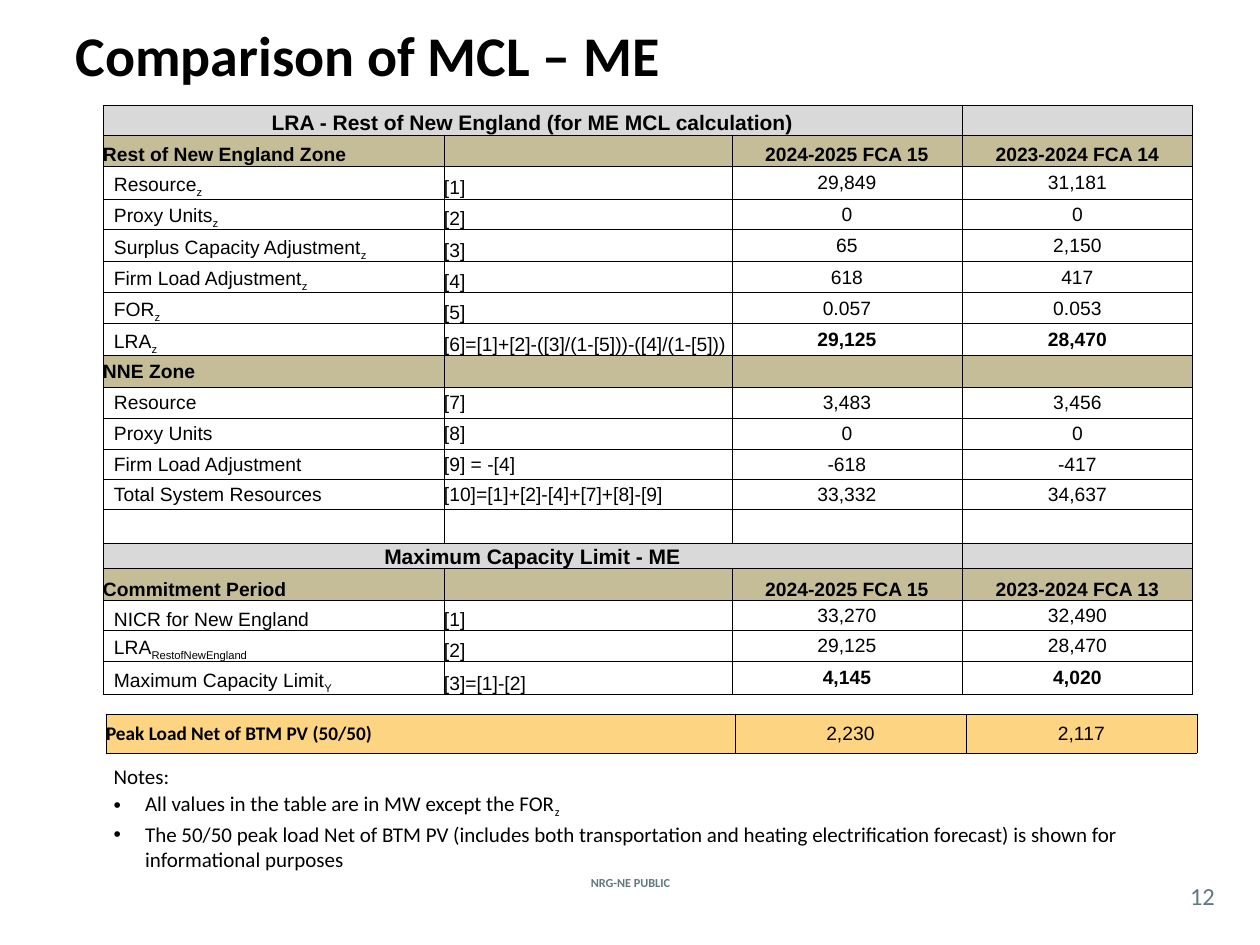
from dataclasses import dataclass

from lxml.etree import SubElement
from pptx import Presentation
from pptx.dml.color import RGBColor
from pptx.enum.text import MSO_ANCHOR, MSO_AUTO_SIZE, PP_ALIGN
from pptx.oxml.ns import qn
from pptx.util import Emu, Pt

PX_PER_INCH = 126
BLACK, SLATE = "000000", "62777F"
TOP, MIDDLE, BOTTOM = MSO_ANCHOR.TOP, MSO_ANCHOR.MIDDLE, MSO_ANCHOR.BOTTOM
LEFT, CENTER = PP_ALIGN.LEFT, PP_ALIGN.CENTER
VALUE_COLUMNS = 2


@dataclass(frozen=True)
class RowStyle:
    fill: str | None = None
    size: int = 11
    bold_label: bool = False
    bold_value: bool = False
    label_font: str = "Arial"
    label_indent: int = 0
    label_anchor: MSO_ANCHOR = BOTTOM
    value_anchor: MSO_ANCHOR = MIDDLE
    banner: bool = False


@dataclass(frozen=True)
class Row:
    height: int
    style: RowStyle
    cells: tuple[str, ...]


BANNER = RowStyle("D9D9D9", size=12, bold_label=True, banner=True)
HEADER = RowStyle("C4BD97", bold_label=True, bold_value=True, value_anchor=BOTTOM)
SECTION = RowStyle("C4BD97", bold_label=True, label_anchor=MIDDLE)
ZONE = RowStyle(label_indent=11)
RESULT = RowStyle(label_indent=11, bold_value=True)
NNE = RowStyle(label_indent=11, label_anchor=MIDDLE)
PEAK = RowStyle("FDD582", bold_label=True, label_font="Calibri", label_anchor=MIDDLE)

# An underscore starts a subscript.
CAPACITY_ROWS = [
    Row(30, BANNER, ("LRA - Rest of New England (for ME MCL calculation)", "", "", "")),
    Row(31, HEADER, ("Rest of New England Zone", "", "2024-2025 FCA 15", "2023-2024 FCA 14")),
    Row(33, ZONE, ("Resource_z", "[1]", "29,849", "31,181")),
    Row(31, ZONE, ("Proxy Units_z", "[2]", "0", "0")),
    Row(32, ZONE, ("Surplus Capacity Adjustment_z", "[3]", "65", "2,150")),
    Row(31, ZONE, ("Firm Load Adjustment_z", "[4]", "618", "417")),
    Row(31, ZONE, ("FOR_z", "[5]", "0.057", "0.053")),
    Row(32, RESULT, ("LRA_z", "[6]=[1]+[2]-([3]/(1-[5]))-([4]/(1-[5]))", "29,125", "28,470")),
    Row(32, SECTION, ("NNE Zone", "", "", "")),
    Row(31, NNE, ("Resource", "[7]", "3,483", "3,456")),
    Row(31, NNE, ("Proxy Units", "[8]", "0", "0")),
    Row(30, NNE, ("Firm Load Adjustment", "[9] = -[4]", "-618", "-417")),
    Row(30, NNE, ("Total System Resources", "[10]=[1]+[2]-[4]+[7]+[8]-[9]", "33,332", "34,637")),
    Row(34, NNE, ("", "", "", "")),
    Row(25, BANNER, ("Maximum Capacity Limit - ME", "", "", "")),
    Row(32, HEADER, ("Commitment Period", "", "2024-2025 FCA 15", "2023-2024 FCA 13")),
    Row(30, ZONE, ("NICR for New England", "[1]", "33,270", "32,490")),
    Row(31, ZONE, ("LRA_RestofNewEngland", "[2]", "29,125", "28,470")),
    Row(33, RESULT, ("Maximum Capacity Limit_Y", "[3]=[1]-[2]", "4,145", "4,020")),
]
PEAK_ROWS = [Row(39, PEAK, ("Peak Load Net of BTM PV (50/50)", "2,230", "2,117"))]
NOTES = [
    "Notes:",
    "All values in the table are in MW except the FOR_z",
    "The 50/50 peak load Net of BTM PV (includes both transportation and heating "
    "electrification forecast) is shown for informational purposes",
]


def px(length: int) -> Emu:
    return Emu(round(length * 914400 / PX_PER_INCH))


def color(value: str) -> RGBColor:
    return RGBColor.from_string(value)


def apply(target, formats: dict) -> None:
    for name, value in formats.items():
        setattr(target, name, value)


def place(shape, left: int, top: int, width: int, height: int) -> None:
    apply(shape, {"left": px(left), "top": px(top), "width": px(width), "height": px(height)})


def write(paragraph, text: str, size: int, font: str = "Calibri",
          bold: bool = False, ink: str = BLACK) -> None:
    """Fill a paragraph, setting what follows an underscore as a subscript."""
    base, _, subscript = text.partition("_")
    for part, offset in ((base, None), (subscript, "-25000")):
        if part:
            span = paragraph.add_run()
            span.text = part
            apply(span.font, {"size": Pt(size), "name": font, "bold": bold})
            span.font.color.rgb = color(ink)
            if offset:
                span._r.get_or_add_rPr().set("baseline", offset)
    if not text:
        SubElement(paragraph._p, qn("a:endParaRPr"), sz=str(size * 100))


def draw_borders(cell) -> None:
    properties = cell._tc.get_or_add_tcPr()
    for side in ("lnL", "lnR", "lnT", "lnB"):
        line = SubElement(properties, qn(f"a:{side}"), w=str(Pt(0.5)))
        SubElement(SubElement(line, qn("a:solidFill")), qn("a:srgbClr"), val=BLACK)


def draw_cell(cell, text: str, style: RowStyle, column: int, is_value: bool) -> None:
    apply(cell, {
        "margin_left": px(style.label_indent if column == 0 else 0),
        "margin_right": 0, "margin_top": 0, "margin_bottom": 0,
        "vertical_anchor": style.value_anchor if is_value else style.label_anchor,
    })
    draw_borders(cell)
    if style.fill:
        cell.fill.solid()
        cell.fill.fore_color.rgb = color(style.fill)
    else:
        cell.fill.background()
    paragraph = cell.text_frame.paragraphs[0]
    paragraph.alignment = CENTER if is_value or style.banner else LEFT
    font = "Arial" if is_value else style.label_font
    bold = style.bold_value if is_value else style.bold_label and column == 0
    write(paragraph, text, style.size, font, bold)


def draw_table(page, left: int, top: int, widths: list[int], rows: list[Row]) -> None:
    height = sum(row.height for row in rows)
    table = page.shapes.add_table(len(rows), len(widths), px(left), px(top),
                                  px(sum(widths)), px(height)).table
    apply(table, {"first_row": False, "horz_banding": False})
    for column, width in zip(table.columns, widths):
        column.width = px(width)
    first_value = len(widths) - VALUE_COLUMNS
    for index, row in enumerate(rows):
        table.rows[index].height = px(row.height)
        for column, text in enumerate(row.cells):
            draw_cell(table.cell(index, column), text, row.style, column, column >= first_value)
        if row.style.banner:
            table.cell(index, 0).merge(table.cell(index, len(widths) - 2))


def draw_title(box) -> None:
    place(box, 63, 10, 1134, 158)
    apply(box.text_frame, {"vertical_anchor": TOP, "margin_top": px(10),
                           "auto_size": MSO_AUTO_SIZE.NONE})
    paragraph = box.text_frame.paragraphs[0]
    paragraph.alignment = LEFT
    write(paragraph, "Comparison of MCL – ME", 32, bold=True)


def draw_notes(box) -> None:
    place(box, 101, 757, 1124, 120)
    frame = box.text_frame
    apply(frame, {"word_wrap": True, "auto_size": MSO_AUTO_SIZE.SHAPE_TO_FIT_TEXT})
    for index, note in enumerate(NOTES):
        paragraph = frame.add_paragraph() if index else frame.paragraphs[0]
        paragraph.space_before = Pt(1.2 if index else 0)
        properties = paragraph._p.get_or_add_pPr()
        properties.set("marL", "228600")
        properties.set("indent", "-228600")
        if index:
            SubElement(properties, qn("a:buChar"), char="•")
        else:
            SubElement(properties, qn("a:buNone"))
        write(paragraph, note, 12)


def draw_label(page, text: str, left: int, top: int, width: int, height: int,
               size: int, bold: bool = False) -> None:
    box = page.shapes.add_textbox(px(left), px(top), px(width), px(height))
    apply(box.text_frame, {"word_wrap": True, "vertical_anchor": MIDDLE, "margin_left": 0,
                           "margin_right": 0, "margin_top": 0, "margin_bottom": 0})
    paragraph = box.text_frame.paragraphs[0]
    paragraph.alignment = CENTER
    write(paragraph, text, size, bold=bold, ink=SLATE)


def main() -> None:
    deck = Presentation()
    apply(deck, {"slide_width": px(1260), "slide_height": px(945)})
    page = deck.slides.add_slide(deck.slide_layouts[1])
    draw_label(page, "NRG-NE PUBLIC", 538, 872, 185, 21, 7, bold=True)
    draw_title(page.shapes.title)
    draw_label(page, "12", 1176, 877, 53, 37, 14)
    draw_notes(page.placeholders[1])
    draw_table(page, 103, 105, [341, 288, 230, 231], CAPACITY_ROWS)
    draw_table(page, 106, 714, [629, 231, 231], PEAK_ROWS)
    deck.save("out.pptx")


if __name__ == "__main__":
    main()
